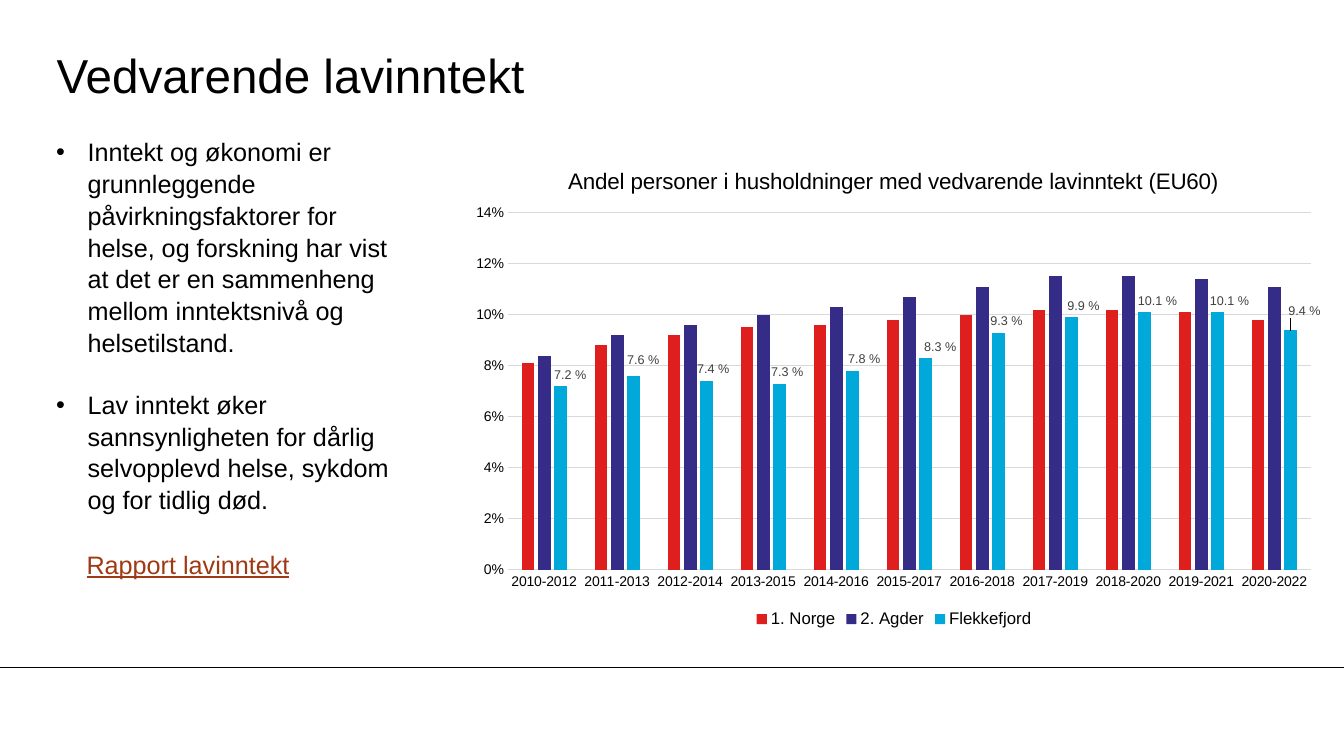
"""Build a slide on persistent low income, with bullets and a column chart."""
from lxml import etree
from pptx import Presentation
from pptx import util as u
from pptx.chart.data import CategoryChartData
from pptx.dml.color import RGBColor
from pptx.enum import chart as ch, shapes, text
from pptx.oxml import parse_xml
from pptx.oxml.ns import nsdecls, qn

PX = 9525
HUES = {"ink": "000000", "link": "9F3A14", "grid": "D9D9D9", "label": "404040",
        "norge": "DF1F1D", "agder": "342C86", "flekke": "00A9DA"}
FONT = "Arial"
POINTS = [
    "Inntekt og økonomi er grunnleggende påvirkningsfaktorer for helse, og forskning "
    "har vist at det er en sammenheng mellom inntektsnivå og helsetilstand.",
    "Lav inntekt øker sannsynligheten for dårlig selvopplevd helse, sykdom og for "
    "tidlig død.",
]
SERIES = [
    ("1. Norge", "norge", [8.1, 8.8, 9.2, 9.5, 9.6, 9.8, 10, 10.2, 10.2, 10.1, 9.8]),
    ("2. Agder", "agder", [8.4, 9.2, 9.6, 10, 10.3, 10.7, 11.1, 11.5, 11.5, 11.4, 11.1]),
    ("Flekkefjord", "flekke", [7.2, 7.6, 7.4, 7.3, 7.8, 8.3, 9.3, 9.9, 10.1, 10.1, 9.4]),
]
SHIFTS = [(10, 0), (10, -4), (7, 0), (8, 0), (12, 0), (15, 0), (8, 0), (12, 0),
          (13, 0), (12, 0), (14, -8)]
LABEL = r"0.0\ %"


def px(*nums):
    """Turn pixel lengths into EMU."""
    return [u.Emu(n * PX) for n in nums]


def hue(name):
    """Give a named colour."""
    return RGBColor.from_string(HUES[name])


def put(item, vals):
    """Set each attribute of an item from a dict."""
    for key, val in vals.items():
        setattr(item, key, val)


def style(font, size, name="ink", **more):
    """Set size, face and colour of a font."""
    put(font, {"size": u.Pt(size), "name": FONT, "bold": False, **more})
    font.color.rgb = hue(name)


def stroke(line, name):
    """Give a line its colour and width."""
    line.color.rgb = hue(name)
    line.width = u.Pt(0.75)


def bullet(para):
    """Add a hanging bullet to a paragraph."""
    props = para._p.get_or_add_pPr()
    props.set("marL", str(30 * PX))
    props.set("indent", str(-30 * PX))
    etree.SubElement(props, qn("a:buFont")).set("typeface", FONT)
    etree.SubElement(props, qn("a:buChar")).set("char", "•")


def write(slide, box, lines, size, name="ink", frame=None, marks=False, **more):
    """Add a text box with one paragraph per line."""
    body = slide.shapes.add_textbox(*px(*box)).text_frame
    put(body, {"word_wrap": True, **(frame or {})})
    for num, line in enumerate(lines):
        para = body.add_paragraph() if num else body.paragraphs[0]
        if marks:
            para.line_spacing = 1.05
            if num:
                para.space_before = u.Pt(21.6)
            bullet(para)
        run = para.add_run()
        run.text = line
        style(run.font, size, name, **more)


def rule(slide, top):
    """Draw a line across the slide."""
    line = slide.shapes.add_connector(shapes.MSO_CONNECTOR.STRAIGHT, *px(0, top, 1280, top))
    stroke(line.line, "ink")
    etree.SubElement(line._element.spPr, qn("a:effectLst"))


def place(node, spot, **vals):
    """Insert a manual layout into a chart part."""
    for old in node.findall(qn("c:layout")):
        node.remove(old)
    tags = "".join(f'<c:{key} val="{val}"/>' for key, val in vals.items())
    node.insert(spot, parse_xml(
        f'<c:layout {nsdecls("c")}><c:manualLayout>{tags}</c:manualLayout></c:layout>'))


def tag(row, wide, high):
    """Label each column of a series, moved by its shift."""
    for num in range(len(SHIFTS)):
        mark = row.points[num].data_label
        style(mark.font, 9, "label")
        mark.position = ch.XL_LABEL_POSITION.OUTSIDE_END
    for node, (right, down) in zip(row._element.iter(qn("c:dLbl")), SHIFTS):
        form = etree.Element(qn("c:numFmt"))
        put_xml = {"formatCode": LABEL, "sourceLinked": "0"}
        for key, val in put_xml.items():
            form.set(key, val)
        node.insert(1, form)
        place(node, 1, x=round(right * 0.95 / wide, 4), y=round(down * 0.95 / high, 4))
    marks = row.data_labels
    put(marks, {"show_value": True, "number_format": LABEL,
                "number_format_is_linked": False})
    style(marks.font, 9, "label")


def axes(chart):
    """Format both axes."""
    cat, val = chart.category_axis, chart.value_axis
    for axis in (cat, val):
        put(axis, {"major_tick_mark": ch.XL_TICK_MARK.NONE,
                   "minor_tick_mark": ch.XL_TICK_MARK.NONE})
        style(axis.tick_labels.font, 10)
    stroke(cat.format.line, "grid")
    put(val, {"minimum_scale": 0, "maximum_scale": 0.14, "major_unit": 0.02,
              "has_major_gridlines": True})
    put(val.tick_labels, {"number_format": "0%", "number_format_is_linked": False})
    val.format.line.fill.background()
    stroke(val.major_gridlines.format.line, "grid")


def graph(slide, box):
    """Add the column chart."""
    data = CategoryChartData(number_format="0.0%")
    data.categories = [f"{year}-{year + 2}" for year in range(2010, 2021)]
    for name, _, vals in SERIES:
        data.add_series(name, [round(val / 100, 3) for val in vals])
    kind = ch.XL_CHART_TYPE.COLUMN_CLUSTERED
    chart = slide.shapes.add_chart(kind, *px(*box), data).chart
    style(chart.font, 10)
    head = chart.chart_title
    head.text_frame.text = "Andel personer i husholdninger med vedvarende lavinntekt (EU60)"
    style(head.text_frame.paragraphs[0].runs[0].font, 16)
    place(head._element, 1, xMode="edge", yMode="edge", x=0.12, y=0.04)
    chart.has_legend = True
    put(chart.legend, {"position": ch.XL_LEGEND_POSITION.BOTTOM, "include_in_layout": False})
    style(chart.legend.font, 12)
    axes(chart)
    plot = chart.plots[0]
    put(plot, {"gap_width": 219, "overlap": -27, "vary_by_categories": False})
    for row, (_, name, _) in zip(plot.series, SERIES):
        row.format.fill.solid()
        row.format.fill.fore_color.rgb = hue(name)
        row.invert_if_negative = False
    tag(plot.series[2], *box[2:])
    place(chart._chartSpace.chart.plotArea, 0, layoutTarget="inner", xMode="edge",
          yMode="edge", x=0.055, y=0.143, w=0.925, h=0.73)


def main():
    """Build and save the slide."""
    deck = Presentation()
    wide, high = px(1280, 720)
    put(deck, {"slide_width": wide, "slide_height": high})
    slide = deck.slides.add_slide(deck.slide_layouts[6])
    rule(slide, 636)
    sides = ("left", "top", "right", "bottom")
    flat = {f"margin_{side}": 0 for side in sides}
    write(slide, (54, 35, 1066, 72), ["Vedvarende lavinntekt"], 34,
          frame={**flat, "vertical_anchor": text.MSO_ANCHOR.MIDDLE})
    grow = {"auto_size": text.MSO_AUTO_SIZE.SHAPE_TO_FIT_TEXT}
    write(slide, (44, 124, 336, 359), POINTS, 18, frame=grow, marks=True)
    write(slide, (73, 518, 254, 38), ["Rapport lavinntekt"], 18, "link", grow, underline=True)
    graph(slide, (438, 136, 827, 466))
    deck.save("out.pptx")


if __name__ == "__main__":
    main()
